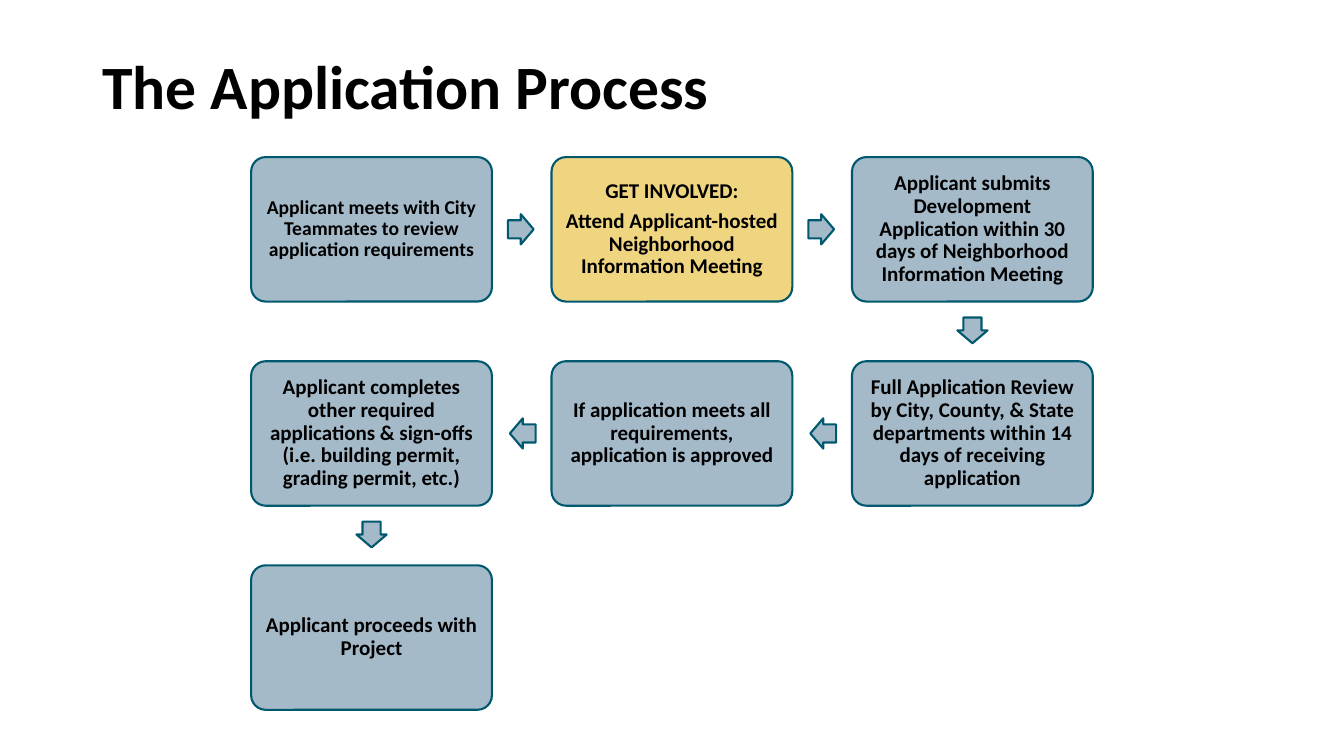
import pptx
import pptx.dml.color
import pptx.enum.shapes
import pptx.enum.text
import pptx.util

Pt = pptx.util.Pt
RGBColor = pptx.dml.color.RGBColor
MSO_SHAPE = pptx.enum.shapes.MSO_SHAPE
PP_ALIGN = pptx.enum.text.PP_ALIGN

BLACK = RGBColor(0x00, 0x00, 0x00)
STEEL = RGBColor(0xA5, 0xBA, 0xC9)
GOLD = RGBColor(0xEF, 0xD5, 0x80)
TEAL = RGBColor(0x00, 0x58, 0x6F)

COLUMNS = 3
STEP_WIDTH, STEP_HEIGHT = 172, 103.2
ARROW_LENGTH, ARROW_WIDTH = 18.4, 21.6
ARROW_GAP = 11.4

# Each step: paragraphs, text size, fill
STEPS = [
    (["Applicant meets with City Teammates to review application requirements"], 14, STEEL),
    (["GET INVOLVED:", "Attend Applicant-hosted Neighborhood Information Meeting"], 15, GOLD),
    (["Applicant submits Development Application within 30 days of "
      "Neighborhood Information Meeting"], 15, STEEL),
    (["Full Application Review by City, County, & State departments within "
      "14 days of receiving application"], 15, STEEL),
    (["If application meets all requirements, application is approved"], 15, STEEL),
    (["Applicant completes other required applications & sign-offs "
      "(i.e. building permit, grading permit, etc.)"], 15, STEEL),
    (["Applicant proceeds with Project"], 15, STEEL),
]


def write_text(frame, paragraphs, size, align=PP_ALIGN.LEFT, space_after=0, inset=None):
    frame.word_wrap = True
    frame.auto_size = pptx.enum.text.MSO_AUTO_SIZE.NONE
    frame.vertical_anchor = pptx.enum.text.MSO_ANCHOR.MIDDLE
    if inset is not None:
        frame.margin_left = frame.margin_right = Pt(inset)
        frame.margin_top = frame.margin_bottom = Pt(inset)
    for index, text in enumerate(paragraphs):
        paragraph = frame.add_paragraph() if index else frame.paragraphs[0]
        paragraph.alignment = align
        paragraph.line_spacing = 0.9
        paragraph.space_after = Pt(space_after)
        run = paragraph.add_run()
        run.text = text
        run.font.name = "Calibri"
        run.font.size = Pt(size)
        run.font.bold = True
        run.font.color.rgb = BLACK


def add_outlined(slide, preset, left, top, width, height, fill):
    outlined = slide.shapes.add_shape(preset, Pt(left), Pt(top), Pt(width), Pt(height))
    outlined.shadow.inherit = False
    outlined.fill.solid()
    outlined.fill.fore_color.rgb = fill
    outlined.line.color.rgb = TEAL
    outlined.line.width = Pt(1.5)
    return outlined


def place_title(slide, left, top, width, height):
    title = slide.shapes.title
    title.left, title.top = Pt(left), Pt(top)
    title.width, title.height = Pt(width), Pt(height)
    write_text(title.text_frame, ["The Application Process"], 44)


def add_arrow(slide, step_left, step_top, across, down):
    """Place an arrow just past the step's edge, pointing across (-1, 0, 1) or down."""
    reach = ARROW_GAP + ARROW_LENGTH / 2
    center_x = step_left + STEP_WIDTH / 2 + across * (STEP_WIDTH / 2 + reach)
    center_y = step_top + STEP_HEIGHT / 2 + down * (STEP_HEIGHT / 2 + reach)
    arrow = add_outlined(slide, MSO_SHAPE.RIGHT_ARROW, center_x - ARROW_LENGTH / 2,
                         center_y - ARROW_WIDTH / 2, ARROW_LENGTH, ARROW_WIDTH, STEEL)
    arrow.adjustments[0], arrow.adjustments[1] = 0.6, 0.5
    arrow.rotation = 90 if down else 180 if across < 0 else 0


def grid_cell(index):
    """Return column and row on a path that turns back at the end of each row."""
    row, position = divmod(index, COLUMNS)
    return (COLUMNS - 1 - position if row % 2 else position), row


def add_process(slide, left, top, width, height):
    rows = -(-len(STEPS) // COLUMNS)
    column_pitch = (width - STEP_WIDTH) / (COLUMNS - 1)
    row_pitch = (height - STEP_HEIGHT) / (rows - 1)
    for index, (paragraphs, size, fill) in enumerate(STEPS):
        column, row = grid_cell(index)
        step_left, step_top = left + column * column_pitch, top + row * row_pitch
        step = add_outlined(slide, MSO_SHAPE.ROUNDED_RECTANGLE, step_left, step_top,
                            STEP_WIDTH, STEP_HEIGHT, fill)
        step.adjustments[0] = 0.1
        write_text(step.text_frame, paragraphs, size, align=PP_ALIGN.CENTER,
                   space_after=5.25, inset=4.2)
        if index + 1 < len(STEPS):
            next_column, next_row = grid_cell(index + 1)
            add_arrow(slide, step_left, step_top, next_column - column, next_row - row)


def main():
    deck = pptx.Presentation()
    deck.slide_width, deck.slide_height = Pt(960), Pt(540)
    slide = deck.slides.add_slide(deck.slide_layouts[5])
    place_title(slide, 66, 12, 828, 104.4)
    add_process(slide, 179.4, 112.2, 601.2, 394.8)
    deck.save("out.pptx")


if __name__ == "__main__":
    main()
